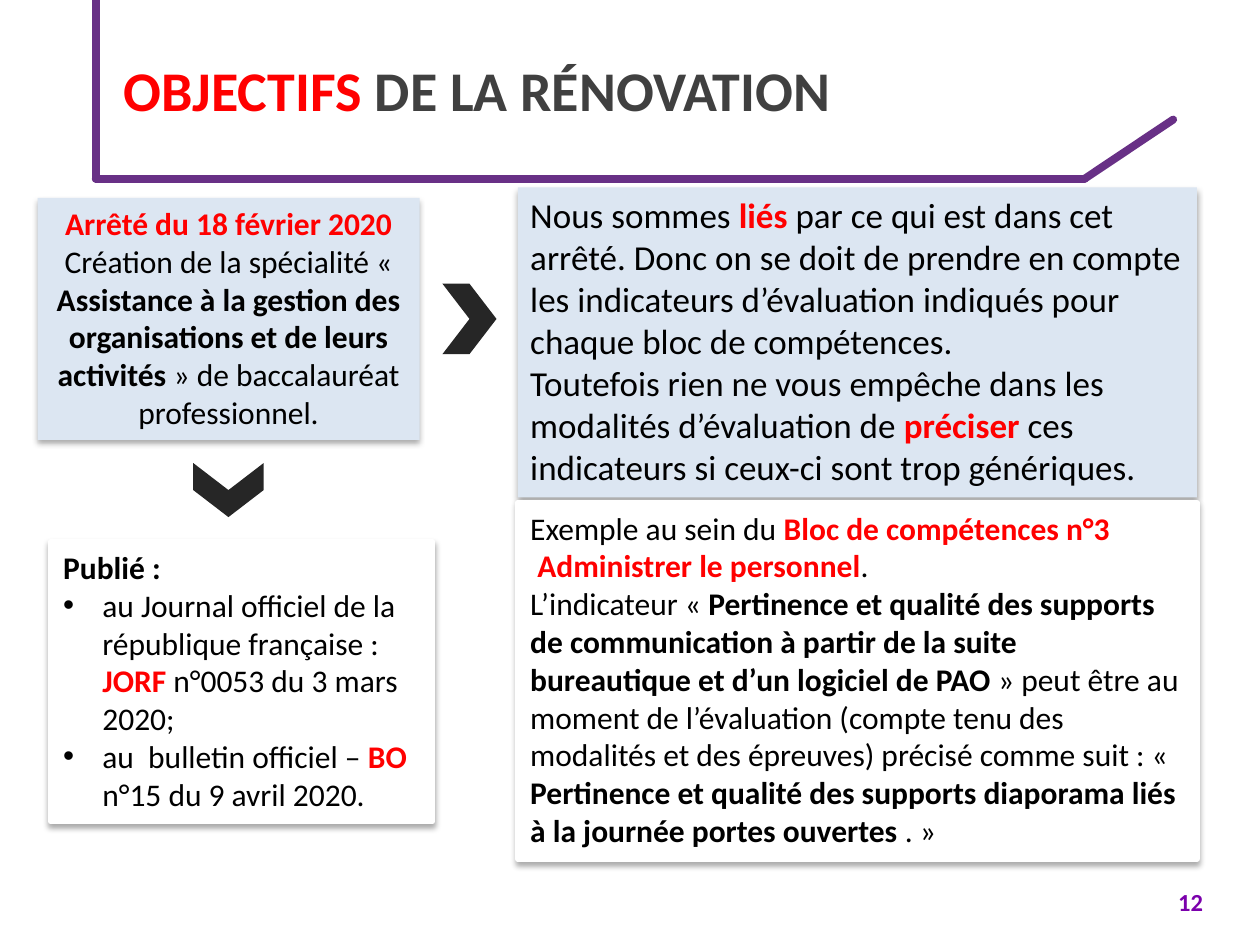
"""Build the slide on the objectives of the reform and its founding decree."""
from dataclasses import dataclass

from lxml.etree import SubElement
from pptx import Presentation
from pptx.dml.color import RGBColor
from pptx.enum.shapes import MSO_CONNECTOR, MSO_SHAPE
from pptx.enum.text import MSO_ANCHOR, MSO_AUTO_SIZE, PP_ALIGN
from pptx.oxml.ns import qn
from pptx.util import Cm, Pt


@dataclass(frozen=True)
class Theme:
    font: str = "Calibri"
    frame: RGBColor = RGBColor(0x68, 0x30, 0x86)
    panel: RGBColor = RGBColor(0xDC, 0xE6, 0xF2)
    paper: RGBColor = RGBColor(0xFF, 0xFF, 0xFF)
    arrow: RGBColor = RGBColor(0x26, 0x26, 0x26)
    ink: RGBColor = RGBColor(0, 0, 0)
    accent: RGBColor = RGBColor(0xFF, 0, 0)
    heading: RGBColor = RGBColor(0x40, 0x40, 0x40)
    number: RGBColor = RGBColor(0x7B, 0, 0xAC)
    heading_size: Pt = Pt(32)
    lead_size: Pt = Pt(20)
    body_size: Pt = Pt(18)
    number_size: Pt = Pt(14)


theme = Theme()
STYLES = {
    "plain": (theme.ink, False),
    "strong": (theme.ink, True),
    "key": (theme.accent, True),
    "heading": (theme.heading, True),
    "number": (theme.number, True),
}


def write(frame, paragraphs, size, align=PP_ALIGN.LEFT, bullets_from=None):
    settings = {"word_wrap": True, "auto_size": MSO_AUTO_SIZE.NONE}
    for name, value in settings.items():
        setattr(frame, name, value)
    for index, runs in enumerate(paragraphs):
        paragraph = frame.paragraphs[0] if index == 0 else frame.add_paragraph()
        if bullets_from is not None:
            bulleted = index >= bullets_from
            properties = paragraph._p.get_or_add_pPr()
            properties.set("marL", str(Cm(0.79) if bulleted else 0))
            properties.set("indent", str(Cm(-0.79) if bulleted else 0))
            if bulleted:
                SubElement(properties, qn("a:buFont"), typeface="Arial")
                SubElement(properties, qn("a:buChar"), char="•")
            else:
                SubElement(properties, qn("a:buNone"))
        for name, value in {"alignment": align, "space_before": Pt(0)}.items():
            setattr(paragraph, name, value)
        for text, style in runs:
            run = paragraph.add_run()
            run.text = text
            color, bold = STYLES[style]
            for name, value in {"name": theme.font, "size": size, "bold": bold}.items():
                setattr(run.font, name, value)
            run.font.color.rgb = color


def dress(card, fill, outlined):
    card.fill.solid()
    card.fill.fore_color.rgb = fill
    if outlined:
        card.line.color.rgb = fill
        card.line.width = Pt(3)
    else:
        card.line.fill.background()
    card.shadow.inherit = False
    effects = card._element.spPr.find(qn("a:effectLst"))
    shadow = SubElement(effects, qn("a:outerShdw"), blurRad=str(Pt(3.5)),
                        dist=str(Pt(2.2)), dir="5400000", rotWithShape="0")
    tint = SubElement(shadow, qn("a:srgbClr"), val="000000")
    SubElement(tint, qn("a:alpha"), val="32000")


deck = Presentation()
deck.slide_width, deck.slide_height = Cm(25.4), Cm(19.05)
slide = deck.slides.add_slide(deck.slide_layouts[1])
shapes = slide.shapes

corners = [(1.93, 0), (1.93, 3.6), (21.87, 3.6), (23.65, 2.41)]
for start, end in zip(corners, corners[1:]):
    edge = shapes.add_connector(MSO_CONNECTOR.STRAIGHT, *map(Cm, start + end))
    edge.line.color.rgb = theme.frame
    edge.line.width = Pt(4.5)
    edge.line._get_or_add_ln().set("cap", "rnd")
    SubElement(edge._element.spPr, qn("a:effectLst"))

heading = shapes.title
published = slide.placeholders[1]
places = [(heading, (2.24, 0, 21.9, 3.58)), (published, (1.02, 10.92, 7.7, 5.64))]
for holder, box in places:
    for name, value in zip(("left", "top", "width", "height"), box):
        setattr(holder, name, Cm(value))

heading.text_frame.vertical_anchor = MSO_ANCHOR.MIDDLE
write(heading.text_frame,
      [[("OBJECTIFS", "key"), (" DE LA RÉNOVATION", "heading")]],
      theme.heading_size)

dress(published, theme.paper, True)
write(published.text_frame, [
    [("Publié :", "strong")],
    [("au Journal officiel de la république française : ", "plain"),
     ("JORF", "key"), (" n°0053 du 3 mars 2020;", "plain")],
    [("au  bulletin officiel – ", "plain"), ("BO", "key"),
     (" n°15 du 9 avril 2020.", "plain")],
], theme.body_size, bullets_from=1)

decree = [
    [("Arrêté du 18 février 2020", "key")],
    [("Création de la spécialité « ", "plain"),
     ("Assistance à la gestion des organisations et de leurs activités", "strong"),
     (" » de baccalauréat professionnel.", "plain")],
]
commitment = [
    [("Nous sommes ", "plain"), ("liés", "key"),
     (" par ce qui est dans cet arrêté. Donc on se doit de prendre en compte "
      "les indicateurs d’évaluation indiqués pour chaque bloc de compétences.", "plain")],
    [("Toutefois rien ne vous empêche dans les modalités d’évaluation de ", "plain"),
     ("préciser", "key"),
     (" ces indicateurs si ceux-ci sont trop génériques.", "plain")],
]
example = [
    [("Exemple au sein du ", "plain"), ("Bloc de compétences n°3", "key")],
    [(" ", "plain"), ("Administrer le personnel", "key"), (".", "plain")],
    [("L’indicateur « ", "plain"),
     ("Pertinence et qualité des supports de communication à partir de la suite "
      "bureautique et d’un logiciel de PAO ", "strong"),
     ("» peut être au moment de l’évaluation (compte tenu des modalités et des "
      "épreuves) précisé comme suit : « ", "plain"),
     ("Pertinence et qualité des supports diaporama "
      "liés à la journée portes ouvertes ", "strong"),
     (". »", "plain")],
]
cards = [
    (decree, (0.76, 3.99, 7.7, 4.88), theme.panel, False, theme.body_size, PP_ALIGN.CENTER),
    (commitment, (10.44, 3.78, 13.69, 6.25), theme.panel, False, theme.lead_size, PP_ALIGN.LEFT),
    (example, (10.44, 10.13, 13.69, 7.19), theme.paper, True, theme.body_size, PP_ALIGN.LEFT),
]
for paragraphs, box, fill, outlined, size, align in cards:
    card = shapes.add_shape(MSO_SHAPE.RECTANGLE, *map(Cm, box))
    dress(card, fill, outlined)
    card.text_frame.vertical_anchor = MSO_ANCHOR.TOP
    write(card.text_frame, paragraphs, size, align)

for left, top, rotation in [(8.92, 5.72, 0), (4.06, 9.17, 90)]:
    chevron = shapes.add_shape(MSO_SHAPE.CHEVRON, Cm(left), Cm(top), Cm(1.09), Cm(1.42))
    chevron.rotation = rotation
    chevron.fill.solid()
    chevron.fill.fore_color.rgb = theme.arrow
    chevron.line.fill.background()
    chevron.shadow.inherit = False

page_number = shapes.add_textbox(Cm(23.5), Cm(17.75), Cm(1.7), Cm(1.02))
write(page_number.text_frame, [[("12", "number")]], theme.number_size)
page_number.text_frame.paragraphs[0].space_after = Pt(6)

deck.save("out.pptx")
